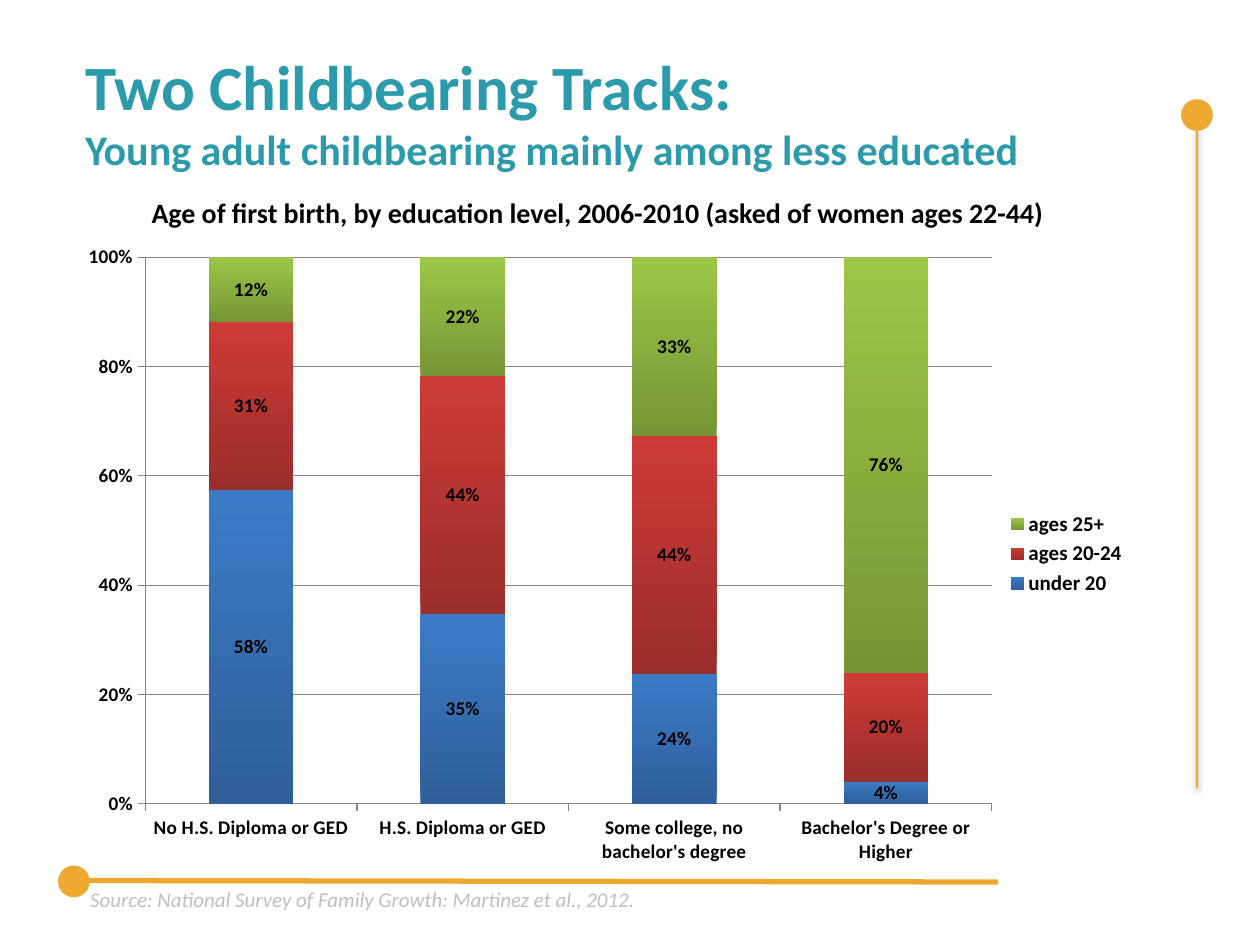
from lxml import etree
from pptx import Presentation
from pptx.chart.data import CategoryChartData
from pptx.dml.color import RGBColor
from pptx.enum.chart import XL_CHART_TYPE as ChartType, XL_LEGEND_POSITION as LegendPos
from pptx.enum.chart import XL_TICK_MARK as Tick
from pptx.enum.shapes import MSO_CONNECTOR as Connector, MSO_SHAPE as Shape
from pptx.enum.text import MSO_ANCHOR as Anchor, PP_ALIGN as Align
from pptx.oxml import parse_xml
from pptx.oxml.ns import nsdecls, qn
from pptx.util import Cm, Pt

FONT = "Calibri"
COLORS = {
    "accent": "EEA82F", "title": "2B9AAA", "text": "000000",
    "source": "BFBFBF", "grid": "868686",
}
EDUCATION = ["No H.S. Diploma or GED", "H.S. Diploma or GED",
             "Some college, no bachelor's degree", "Bachelor's Degree or Higher"]
# Age group, shares, gradient from bar foot to bar top
AGE_GROUPS = [
    ("under 20", (0.58, 0.35, 0.24, 0.04), ("2E5F99", "3C7BC7")),
    ("ages 20-24", (0.31, 0.44, 0.44, 0.20), ("9B2D2A", "CE3B37")),
    ("ages 25+", (0.12, 0.22, 0.33, 0.76), ("769535", "9BC747")),
]
PLOT_BOX = {"x": 0.068, "y": 0.034, "w": 0.794, "h": 0.859}


def rgb(name):
    return RGBColor.from_string(COLORS[name])


def style_font(font, size, color="text", bold=False, italic=False):
    font.name, font.size = FONT, Pt(size)
    font.bold, font.italic = bold, italic
    font.color.rgb = rgb(color)


def add_pin(slide, start, end, head, width, shadow=False):
    """Accent line with a round head centred on the point `head`."""
    stem = slide.shapes.add_connector(
        Connector.STRAIGHT, *(Cm(v) for v in start + end))
    stem.line.color.rgb = rgb("accent")
    stem.line.width = Pt(width)
    effects = etree.SubElement(stem._element.spPr, qn("a:effectLst"))
    if shadow:
        effects.append(parse_xml(
            f'<a:outerShdw {nsdecls("a")} blurRad="{Pt(3.1)}" dist="{Pt(1.6)}" '
            'dir="5400000" rotWithShape="0"><a:srgbClr val="000000">'
            '<a:alpha val="38000"/></a:srgbClr></a:outerShdw>'))

    size = 0.64
    left, top = (v - size / 2 for v in head)
    dot = slide.shapes.add_shape(Shape.OVAL, Cm(left), Cm(top), Cm(size), Cm(size))
    dot.shadow.inherit = False
    dot.fill.solid()
    dot.fill.fore_color.rgb = rgb("accent")
    dot.line.fill.background()


def add_text(slide, box, text, size, align=Align.LEFT, anchor=Anchor.TOP, **style):
    frame = slide.shapes.add_textbox(*(Cm(v) for v in box)).text_frame
    frame.word_wrap = True
    frame.vertical_anchor = anchor
    paragraph = frame.paragraphs[0]
    paragraph.alignment = align
    paragraph.text = text
    style_font(paragraph.font, size, **style)
    return paragraph


def add_heading(slide, box):
    heading = add_text(slide, box, "Two Childbearing Tracks:", 36,
                       anchor=Anchor.MIDDLE, color="title", bold=True)
    heading.add_line_break()
    subtitle = heading.add_run()
    subtitle.text = "Young adult childbearing mainly among less educated"
    subtitle.font.size = Pt(24)


def style_axes(chart):
    shares, levels = chart.value_axis, chart.category_axis
    for axis in (shares, levels):
        axis.major_tick_mark = Tick.OUTSIDE
        axis.minor_tick_mark = Tick.NONE
        axis.format.line.color.rgb = rgb("grid")
        style_font(axis.tick_labels.font, 11, bold=True)
    shares.minimum_scale, shares.maximum_scale = 0, 1
    shares.major_unit = 0.2
    shares.tick_labels.number_format = "0%"
    shares.tick_labels.number_format_is_linked = False
    shares.has_major_gridlines = True
    shares.major_gridlines.format.line.color.rgb = rgb("grid")


def style_series(series, gradient):
    fill = series.format.fill
    fill.gradient()
    fill.gradient_angle = 90
    for stop, color in zip(fill.gradient_stops, gradient):
        stop.color.rgb = RGBColor.from_string(color)
    labels = series.data_labels
    labels.show_value = True
    labels.number_format = "0%"
    labels.number_format_is_linked = False
    style_font(labels.font, 11, bold=True)


def fix_plot_area(chart):
    """Place the inner plot area by fractions of the chart."""
    area = chart._chartSpace.chart.plotArea
    for old in area.findall(qn("c:layout")):
        area.remove(old)
    modes = "".join(f'<c:{k}Mode val="edge"/>' for k in "xy")
    sizes = "".join(f'<c:{k} val="{v}"/>' for k, v in PLOT_BOX.items())
    area.insert(0, parse_xml(
        f'<c:layout {nsdecls("c")}><c:manualLayout><c:layoutTarget val="inner"/>'
        f'{modes}{sizes}</c:manualLayout></c:layout>'))


def add_birth_chart(slide, box):
    data = CategoryChartData(number_format="0%")
    data.categories = EDUCATION
    for name, shares, _ in AGE_GROUPS:
        data.add_series(name, shares)
    chart = slide.shapes.add_chart(
        ChartType.COLUMN_STACKED_100, *(Cm(v) for v in box), data).chart
    style_font(chart.font, 10)
    chart.has_title = False

    plot = chart.plots[0]
    plot.gap_width, plot.overlap = 150, 100
    plot.vary_by_categories = False
    for series, (_, _, gradient) in zip(plot.series, AGE_GROUPS):
        style_series(series, gradient)
    style_axes(chart)

    chart.has_legend = True
    chart.legend.position = LegendPos.RIGHT
    chart.legend.include_in_layout = False
    style_font(chart.legend.font, 12, bold=True)
    fix_plot_area(chart)


def main():
    deck = Presentation()
    deck.slide_width, deck.slide_height = Cm(25.4), Cm(19.05)
    slide = deck.slides.add_slide(deck.slide_layouts[6])

    # Accent lines at the right and the foot
    add_pin(slide, (24.13, 15.88), (24.13, 2.57), (24.13, 2.32), 1.5, shadow=True)
    add_pin(slide, (1.7, 17.75), (20.12, 17.78), (1.49, 17.77), 3)

    # Heading, chart caption and source
    add_heading(slide, (1.47, 0.64, 22.86, 3.18))
    add_text(slide, (1.47, 3.81, 21.16, 0.94),
             "Age of first birth, by education level, 2006-2010 "
             "(asked of women ages 22-44)", 16, align=Align.CENTER, bold=True)
    add_text(slide, (1.57, 17.75, 15.44, 0.76),
             "Source: National Survey of Family Growth: Martinez et al., 2012.",
             12, color="source", italic=True)

    # Stacked shares by education level
    add_birth_chart(slide, (1.47, 4.75, 21.49, 12.83))
    deck.save("out.pptx")


if __name__ == "__main__":
    main()
